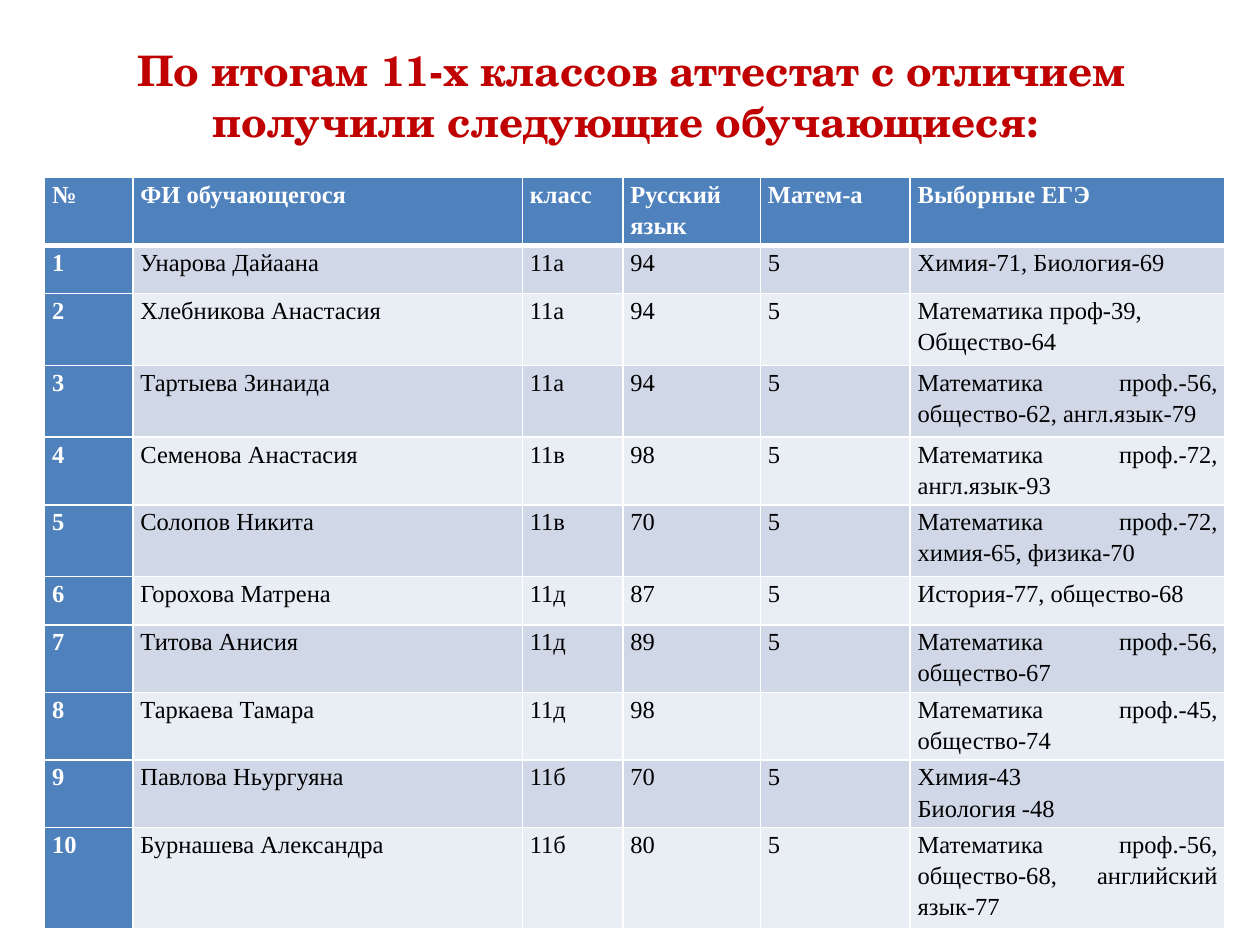
from lxml import etree
from pptx import Presentation
from pptx.dml.color import RGBColor
from pptx.enum.text import MSO_ANCHOR, PP_ALIGN
from pptx.oxml.ns import qn
from pptx.util import Cm, Pt

CENTER = PP_ALIGN.CENTER
JUSTIFY = PP_ALIGN.JUSTIFY
MIDDLE = MSO_ANCHOR.MIDDLE

TITLE = "По итогам 11-х классов аттестат с отличием получили следующие обучающиеся: "
HEADER = ("№", "ФИ обучающегося", "класс", "Русский язык", "Матем-а", "Выборные ЕГЭ")
STUDENTS = [
    ("Унарова Дайаана", "11а", "94", "5", "Химия-71, Биология-69"),
    ("Хлебникова Анастасия", "11а", "94", "5", "Математика проф-39,\nОбщество-64"),
    ("Тартыева Зинаида", "11а", "94", "5", "Математика проф.-56, общество-62, англ.язык-79"),
    ("Семенова Анастасия", "11в", "98", "5", "Математика проф.-72, англ.язык-93"),
    ("Солопов Никита", "11в", "70", "5", "Математика проф.-72, химия-65, физика-70"),
    ("Горохова Матрена", "11д", "87", "5", "История-77, общество-68"),
    ("Титова Анисия", "11д", "89", "5", "Математика проф.-56, общество-67"),
    ("Таркаева Тамара", "11д", "98", "", "Математика проф.-45, общество-74"),
    ("Павлова Ньургуяна", "11б ", "70", "5", "Химия-43\nБиология -48"),
    ("Бурнашева Александра", "11б ", "80", "5", "Математика проф.-56, общество-68, английский язык-77"),
]
COLUMN_WIDTHS = (1.78, 7.85, 2.03, 2.77, 3.02, 6.35)
LOW_ROW, HIGH_ROW = 0.97, 1.45
HIGH_ROWS = {2, 3, 5, 10}
ACCENT, BANDS = "4F81BD", ("E9EDF4", "D0D8E8")
WHITE, BLACK, RED = "FFFFFF", "000000", "C00000"


def color(value):
    return RGBColor.from_string(value)


def add_run(paragraph, text, font_name, size, font_color, bold):
    run = paragraph.add_run()
    run.text = text
    run.font.name = font_name
    run.font.size = Pt(size)
    run.font.bold = bold
    run.font.color.rgb = color(font_color)


def add_border(cell, side, width):
    properties = cell._tc.get_or_add_tcPr()
    line = etree.SubElement(properties, qn("a:ln" + side), w=str(Pt(width)))
    fill = etree.SubElement(line, qn("a:solidFill"))
    etree.SubElement(fill, qn("a:srgbClr"), val=WHITE)


def fill_cell(cell, text, row, column):
    emphasized = row == 0 or column == 0
    cell.margin_left = cell.margin_right = Cm(0.15)
    cell.margin_top = cell.margin_bottom = 0
    add_border(cell, "L", 1)
    add_border(cell, "R", 1)
    add_border(cell, "T", 3 if row == 1 else 1)
    add_border(cell, "B", 3 if row == 0 else 1)
    cell.fill.solid()
    cell.fill.fore_color.rgb = color(ACCENT if emphasized else BANDS[row % 2])
    if not text:
        return
    frame = cell.text_frame
    for index, line in enumerate(text.split("\n")):
        paragraph = frame.add_paragraph() if index else frame.paragraphs[0]
        paragraph.alignment = JUSTIFY
        paragraph.line_spacing = 1.15
        add_run(paragraph, line, "Times New Roman", 14,
                WHITE if emphasized else BLACK, emphasized)


def add_title(slide):
    title = slide.shapes.add_textbox(Cm(1.3), Cm(0.33), Cm(22.86), Cm(3.18))
    frame = title.text_frame
    frame.word_wrap = True
    frame.vertical_anchor = MIDDLE
    paragraph = frame.paragraphs[0]
    paragraph.alignment = CENTER
    add_run(paragraph, TITLE, "TeX Gyre Schola", 24, RED, True)


def add_results(slide):
    rows = [HEADER] + [(str(number), *student) for number, student in enumerate(STUDENTS, 1)]
    heights = [HIGH_ROW if row in HIGH_ROWS else LOW_ROW for row in range(len(rows))]
    table = slide.shapes.add_table(
        len(rows), len(HEADER), Cm(0.9), Cm(3.58),
        Cm(sum(COLUMN_WIDTHS)), Cm(sum(heights))).table
    for column, width in zip(table.columns, COLUMN_WIDTHS):
        column.width = Cm(width)
    for row, (values, height) in enumerate(zip(rows, heights)):
        table.rows[row].height = Cm(height)
        for column, text in enumerate(values):
            fill_cell(table.cell(row, column), text, row, column)


def main():
    presentation = Presentation()
    presentation.slide_width = Cm(25.4)
    presentation.slide_height = Cm(19.05)
    slide = presentation.slides.add_slide(presentation.slide_layouts[6])
    add_title(slide)
    add_results(slide)
    presentation.save("out.pptx")


if __name__ == "__main__":
    main()
